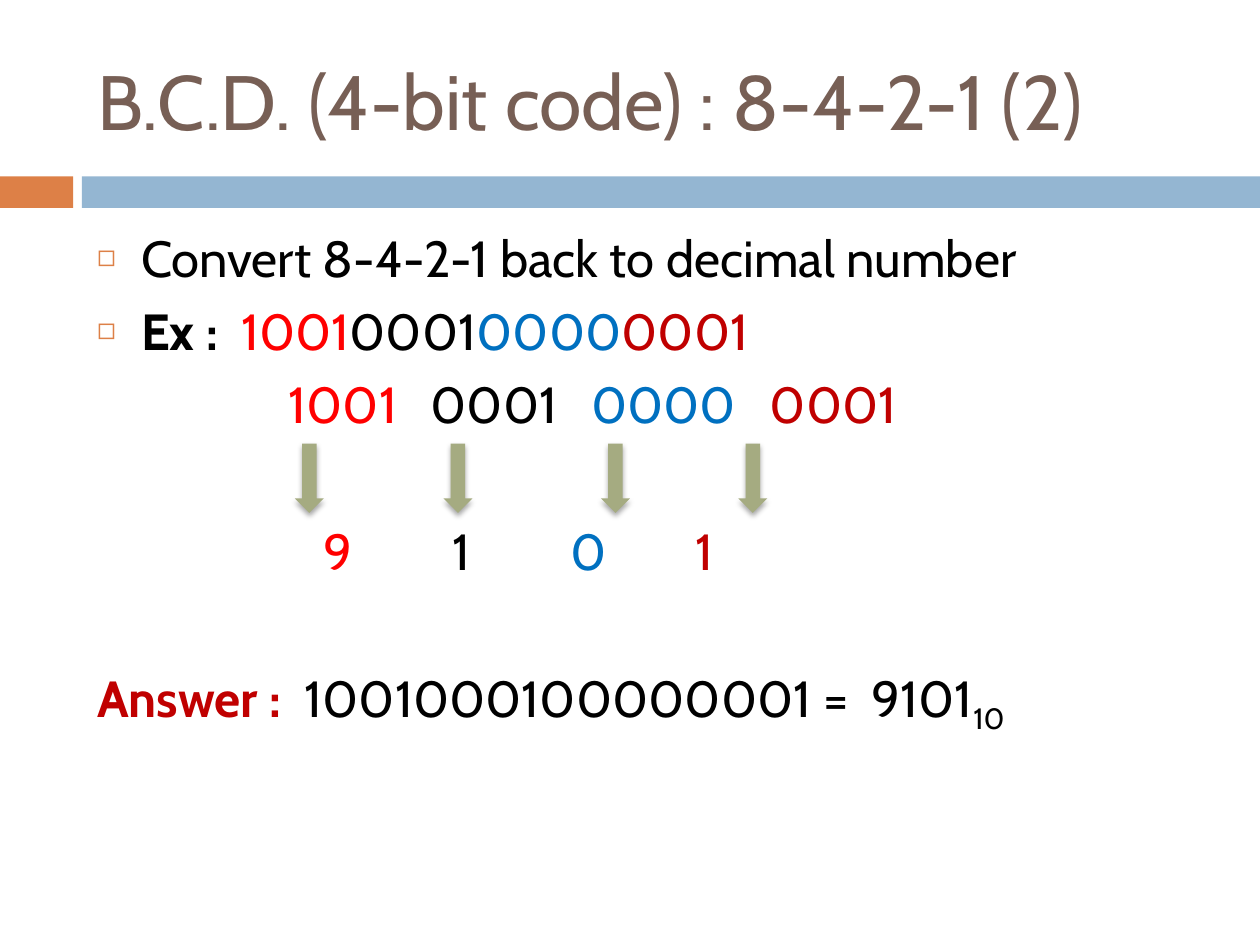
"""Build a slide on turning 8-4-2-1 code back into a decimal number."""
from lxml.etree import SubElement
from pptx import Presentation
from pptx.dml.color import RGBColor
from pptx.enum.shapes import MSO_SHAPE
from pptx.enum.text import MSO_ANCHOR, MSO_AUTO_SIZE, PP_ALIGN
from pptx.oxml.ns import qn
from pptx.util import Inches, Pt

BLACK = RGBColor(0x00, 0x00, 0x00)
RED = RGBColor(0xFF, 0x00, 0x00)
BLUE = RGBColor(0x00, 0x70, 0xC0)
DARK = RGBColor(0xC0, 0x00, 0x00)
BROWN = RGBColor(0x77, 0x5F, 0x55)
ORANGE = RGBColor(0xDD, 0x80, 0x47)
SKY = RGBColor(0x94, 0xB6, 0xD2)
OLIVE = RGBColor(0xA5, 0xAB, 0x81)
FONT = "Cabin"
HUES = [RED, BLACK, BLUE, DARK]
CODES = ["1001", "0001", "0000", "0001"]
DIGITS = ["9", "1", "0", "1"]


def add_block(kind, left, top, width, height, color):
    block = slide.shapes.add_shape(
        kind, Inches(left), Inches(top), Inches(width), Inches(height))
    block.shadow.inherit = False
    block.fill.solid()
    block.fill.fore_color.rgb = color
    block.line.fill.background()
    return block


def add_run(para, text, size, color, bold=False):
    run = para.add_run()
    run.text = text
    run.font.name = FONT
    run.font.size = Pt(size)
    run.font.color.rgb = color
    run.font.bold = bold
    return run


deck = Presentation()
deck.slide_width, deck.slide_height = Inches(10), Inches(7.5)
slide = deck.slides.add_slide(deck.slide_layouts[1])

add_block(MSO_SHAPE.RECTANGLE, 0, 1.4, 0.58, 0.25, ORANGE)
add_block(MSO_SHAPE.RECTANGLE, 0.65, 1.4, 9.35, 0.25, SKY)

title, body = slide.placeholders
for holder, top, height in [(title, 0.25, 1.08), (body, 1.75, 4.27)]:
    holder.left, holder.top = Inches(0.67), Inches(top)
    holder.width, holder.height = Inches(8.92), Inches(height)
    holder.text_frame.auto_size = MSO_AUTO_SIZE.NONE
    holder.text_frame.word_wrap = True

title.text_frame.vertical_anchor = MSO_ANCHOR.MIDDLE
head = title.text_frame.paragraphs[0]
head.alignment = PP_ALIGN.LEFT
add_run(head, "B.C.D. (4-bit code) : 8-4-2-1 (2)", 44, BROWN)

lines = [
    (7, True, 0.35, [], [("Convert 8-4-2-1 back to decimal number", BLACK, False)]),
    (7, True, 0.35, [], [("Ex :", BLACK, True), ("  ", BLACK, False)]
     + [(code, hue, False) for code, hue in zip(CODES, HUES)]),
    (7, False, 1.52, [12.6, 12.6, 12.6],
     [(code, hue, False) for code, hue in zip(CODES, HUES)]),
    (49, False, 1.8, [50.4, 50.4, 44.1],
     [(digit, hue, False) for digit, hue in zip(DIGITS, HUES)]),
    (49, False, 0, [], [("Answer :  ", DARK, True),
                        ("".join(CODES) + " =  " + "".join(DIGITS), BLACK, False),
                        ("10", BLACK, False)]),
]
frame = body.text_frame
for row, (space, mark, indent, gaps, parts) in enumerate(lines):
    para = frame.add_paragraph() if row else frame.paragraphs[0]
    para.space_before = Pt(space)
    props = para._p.get_or_add_pPr()
    props.set("marL", str(Inches(indent)))
    props.set("indent", str(-Inches(indent) if mark else 0))
    if mark:
        tint = SubElement(props, qn("a:buClr"))
        SubElement(tint, qn("a:srgbClr"), val=str(ORANGE))
        SubElement(props, qn("a:buSzPct"), val="60000")
        SubElement(props, qn("a:buChar"), char="◻")
    else:
        SubElement(props, qn("a:buNone"))
    for place, (text, hue, bold) in enumerate(parts):
        run = add_run(para, text, 29, hue, bold)
        if place < len(gaps):
            gap = add_run(para, " ", 29, hue)
            gap.font._element.set("spc", str(round(gaps[place] * 100)))
run.font._element.set("baseline", "-25000")

for left in [2.34, 3.52, 4.77, 5.86]:
    arrow = add_block(MSO_SHAPE.DOWN_ARROW, left, 3.52, 0.23, 0.55, OLIVE)
    effect = arrow._element.spPr.find(qn("a:effectLst"))
    shade = SubElement(effect, qn("a:outerShdw"), blurRad=str(Pt(3)),
                       dist=str(Pt(2)), dir="5400000", rotWithShape="0")
    black = SubElement(shade, qn("a:srgbClr"), val=str(BLACK))
    SubElement(black, qn("a:alpha"), val="35000")

deck.save("out.pptx")
